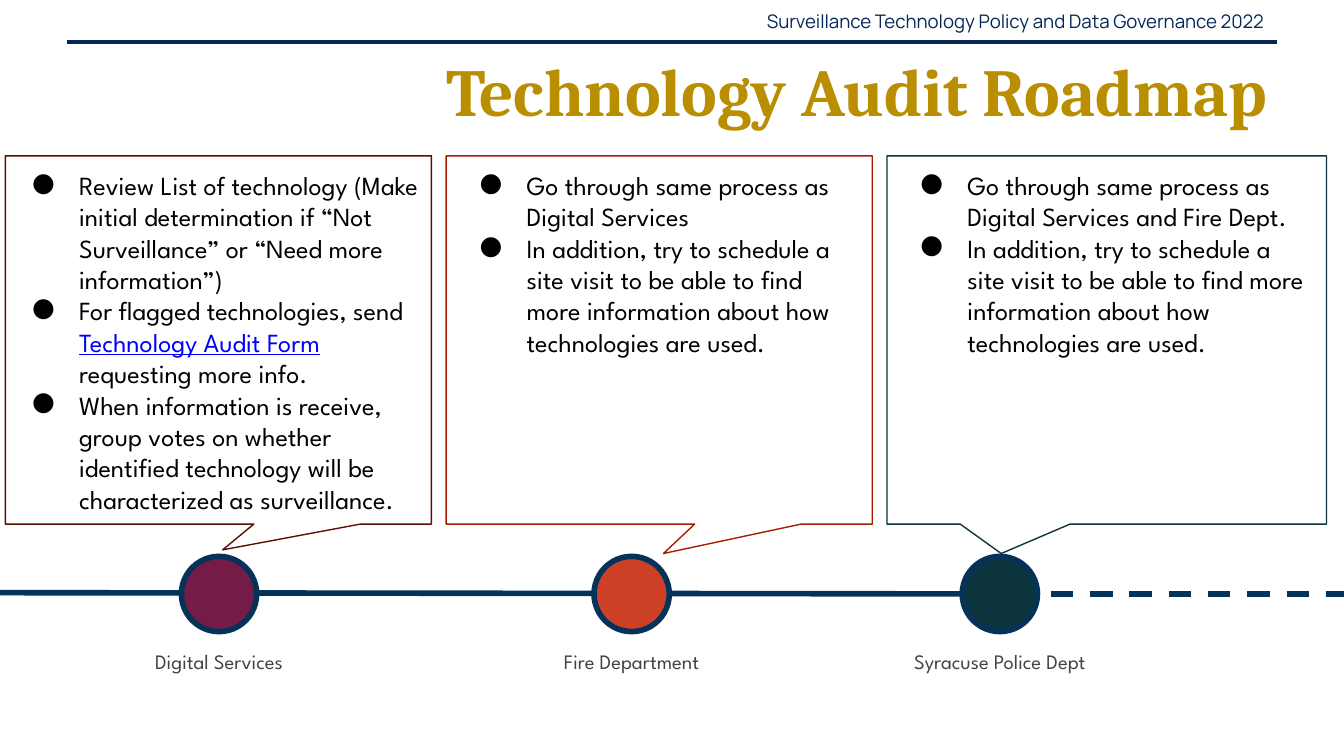
from dataclasses import dataclass

from lxml.etree import SubElement
from pptx import Presentation
from pptx.dml.color import RGBColor
from pptx.enum.dml import MSO_LINE
from pptx.enum.shapes import MSO_CONNECTOR, MSO_SHAPE
from pptx.enum.text import MSO_ANCHOR, MSO_AUTO_SIZE, PP_ALIGN
from pptx.oxml.ns import qn
from pptx.shapes.autoshape import Shape
from pptx.slide import Slide
from pptx.text.text import _Paragraph as Paragraph
from pptx.util import Inches, Pt


@dataclass(frozen=True)
class Theme:
    header: str = "062858"
    title: str = "B98E00"
    timeline: str = "053259"
    label: str = "434343"
    body: str = "000000"
    link: str = "0000FF"
    body_font: str = "League Spartan"
    header_font: str = "Manrope"
    title_font: str = "Cambria"
    header_size: int = 10
    title_size: int = 36
    label_size: int = 11
    body_size: int = 14


@dataclass(frozen=True)
class Box:
    left: float
    top: float
    width: float
    height: float

    def lengths(self) -> list[int]:
        return [Inches(value) for value in (self.left, self.top, self.width, self.height)]


@dataclass(frozen=True)
class Stage:
    label: str
    label_width: float
    center: float
    fill: str
    outline: str
    callout: Box
    pointer: tuple[float, float]
    text: Box
    bullets: tuple[tuple[str, ...], ...]


THEME = Theme()
CALLOUT_TOP, CALLOUT_HEIGHT = 1.16, 2.74
MARKER_TOP, MARKER_SIZE = 4.14, 0.56
LABEL_TOP, LABEL_HEIGHT = 4.74, 0.39
LINK_TEXT = "Technology Audit Form "
SITE_VISIT = (
    "In addition, try to schedule a site visit to be able to find more "
    "information about how technologies are used."
)

STAGES = (
    Stage(
        "Digital Services", 1.29, 1.63, "741B47", "5B0F00",
        Box(0.04, CALLOUT_TOP, 3.17, CALLOUT_HEIGHT), (0.01, 0.57),
        Box(-0.01, CALLOUT_TOP, 3.33, 3.17),
        (
            ("Review List of technology (Make initial determination if "
             "“Not Surveillance” or “Need more information”)",),
            ("For flagged technologies, send ", LINK_TEXT, "requesting more info."),
            ("When information is receive, group votes on whether identified "
             "technology will be characterized as surveillance.",),
        ),
    ),
    Stage(
        "Fire Department", 1.48, 4.7, "CC4125", "A61C00",
        Box(3.32, CALLOUT_TOP, 3.17, CALLOUT_HEIGHT), (0.01, 0.58),
        Box(3.32, CALLOUT_TOP, 3.17, 1.99),
        (("Go through same process as Digital Services",), (SITE_VISIT,)),
    ),
    Stage(
        "Syracuse Police Dept", 1.71, 7.44, "0C343D", "0C343D",
        Box(6.6, CALLOUT_TOP, 3.27, CALLOUT_HEIGHT), (-0.24, 0.58),
        Box(6.6, CALLOUT_TOP, 3.27, 2.23),
        (("Go through same process as Digital Services and Fire Dept.",), (SITE_VISIT,)),
    ),
)


def add_line(slide: Slide, start: tuple[float, float], end: tuple[float, float],
             color: str, width: float, dashed: bool = False) -> None:
    points = [Inches(value) for value in (*start, *end)]
    connector = slide.shapes.add_connector(MSO_CONNECTOR.STRAIGHT, *points)
    connector.line.color.rgb = RGBColor.from_string(color)
    connector.line.width = Pt(width)
    if dashed:
        connector.line.dash_style = MSO_LINE.DASH
    SubElement(connector._element.spPr, qn("a:effectLst"))


def add_outlined_shape(slide: Slide, kind: MSO_SHAPE, box: Box, outline: str,
                       width: float, fill: str | None = None) -> Shape:
    shape = slide.shapes.add_shape(kind, *box.lengths())
    shape.shadow.inherit = False
    if fill:
        shape.fill.solid()
        shape.fill.fore_color.rgb = RGBColor.from_string(fill)
    else:
        shape.fill.background()
    shape.line.color.rgb = RGBColor.from_string(outline)
    shape.line.width = Pt(width)
    return shape


def add_text_box(slide: Slide, box: Box, vertical_inset: float = 0.1) -> Shape:
    shape = slide.shapes.add_textbox(*box.lengths())
    frame = shape.text_frame
    frame.word_wrap = True
    frame.margin_left = frame.margin_right = Inches(0.1)
    frame.margin_top = frame.margin_bottom = Inches(vertical_inset)
    return shape


def format_runs(paragraph: Paragraph, font: str, size: int, color: str,
                bold: bool = False) -> None:
    for run in paragraph.runs:
        run.font.name = font
        run.font.size = Pt(size)
        run.font.bold = bold
        run.font.color.rgb = RGBColor.from_string(color)


def add_heading(slide: Slide, box: Box, text: str, font: str, size: int,
                color: str, bold: bool = False) -> None:
    frame = add_text_box(slide, box, 0.05).text_frame
    frame.vertical_anchor = MSO_ANCHOR.MIDDLE
    frame.text = text
    paragraph = frame.paragraphs[0]
    paragraph.alignment = PP_ALIGN.RIGHT
    format_runs(paragraph, font, size, color, bold)


def add_bullet(paragraph: Paragraph) -> None:
    properties = paragraph._p.get_or_add_pPr()
    properties.set("marL", str(Inches(0.5)))
    properties.set("indent", str(Inches(-0.35)))
    bullet_color = SubElement(properties, qn("a:buClr"))
    SubElement(bullet_color, qn("a:srgbClr"), val=THEME.body)
    SubElement(properties, qn("a:buFont"), typeface=THEME.body_font)
    SubElement(properties, qn("a:buChar"), char="●")


def add_stage_text(slide: Slide, stage: Stage) -> None:
    frame = add_text_box(slide, stage.text).text_frame
    frame.auto_size = MSO_AUTO_SIZE.SHAPE_TO_FIT_TEXT
    for index, parts in enumerate(stage.bullets):
        paragraph = frame.add_paragraph() if index else frame.paragraphs[0]
        add_bullet(paragraph)
        for part in parts:
            paragraph.add_run().text = part
        format_runs(paragraph, THEME.body_font, THEME.body_size, THEME.body)
        for run in paragraph.runs:
            if run.text == LINK_TEXT:
                run.font.underline = True
                run.font.color.rgb = RGBColor.from_string(THEME.link)


def add_stage_label(slide: Slide, stage: Stage) -> None:
    left = stage.center - stage.label_width / 2
    frame = add_text_box(slide, Box(left, LABEL_TOP, stage.label_width, LABEL_HEIGHT)).text_frame
    frame.auto_size = MSO_AUTO_SIZE.SHAPE_TO_FIT_TEXT
    frame.text = stage.label
    frame.paragraphs[0].alignment = PP_ALIGN.CENTER
    format_runs(frame.paragraphs[0], THEME.body_font, THEME.label_size, THEME.label)


def main() -> None:
    presentation = Presentation()
    presentation.slide_width = Inches(10)
    presentation.slide_height = Inches(10 * 9 / 16)
    slide = presentation.slides.add_slide(presentation.slide_layouts[6])

    add_line(slide, (0.5, 0.31), (9.5, 0.31), THEME.header, 2.25)
    add_heading(slide, Box(5.21, 0.01, 4.29, 0.3),
                "Surveillance Technology Policy and Data Governance 2022",
                THEME.header_font, THEME.header_size, THEME.header)

    for stage in STAGES:
        callout = add_outlined_shape(slide, MSO_SHAPE.RECTANGULAR_CALLOUT, stage.callout,
                                     stage.outline, 0.75)
        callout.adjustments[0], callout.adjustments[1] = stage.pointer

    add_line(slide, (7.82, 4.42), (10.01, 4.42), THEME.timeline, 3, dashed=True)
    add_line(slide, (-0.01, 4.41), (7.72, 4.42), THEME.timeline, 3)

    for stage in STAGES:
        marker = Box(stage.center - MARKER_SIZE / 2, MARKER_TOP, MARKER_SIZE, MARKER_SIZE)
        add_outlined_shape(slide, MSO_SHAPE.OVAL, marker, THEME.timeline, 3, stage.fill)
        add_stage_label(slide, stage)
        add_stage_text(slide, stage)

    add_heading(slide, Box(0.28, 0.35, 9.25, 0.64), "Technology Audit Roadmap",
                THEME.title_font, THEME.title_size, THEME.title, bold=True)
    presentation.save("out.pptx")


if __name__ == "__main__":
    main()
